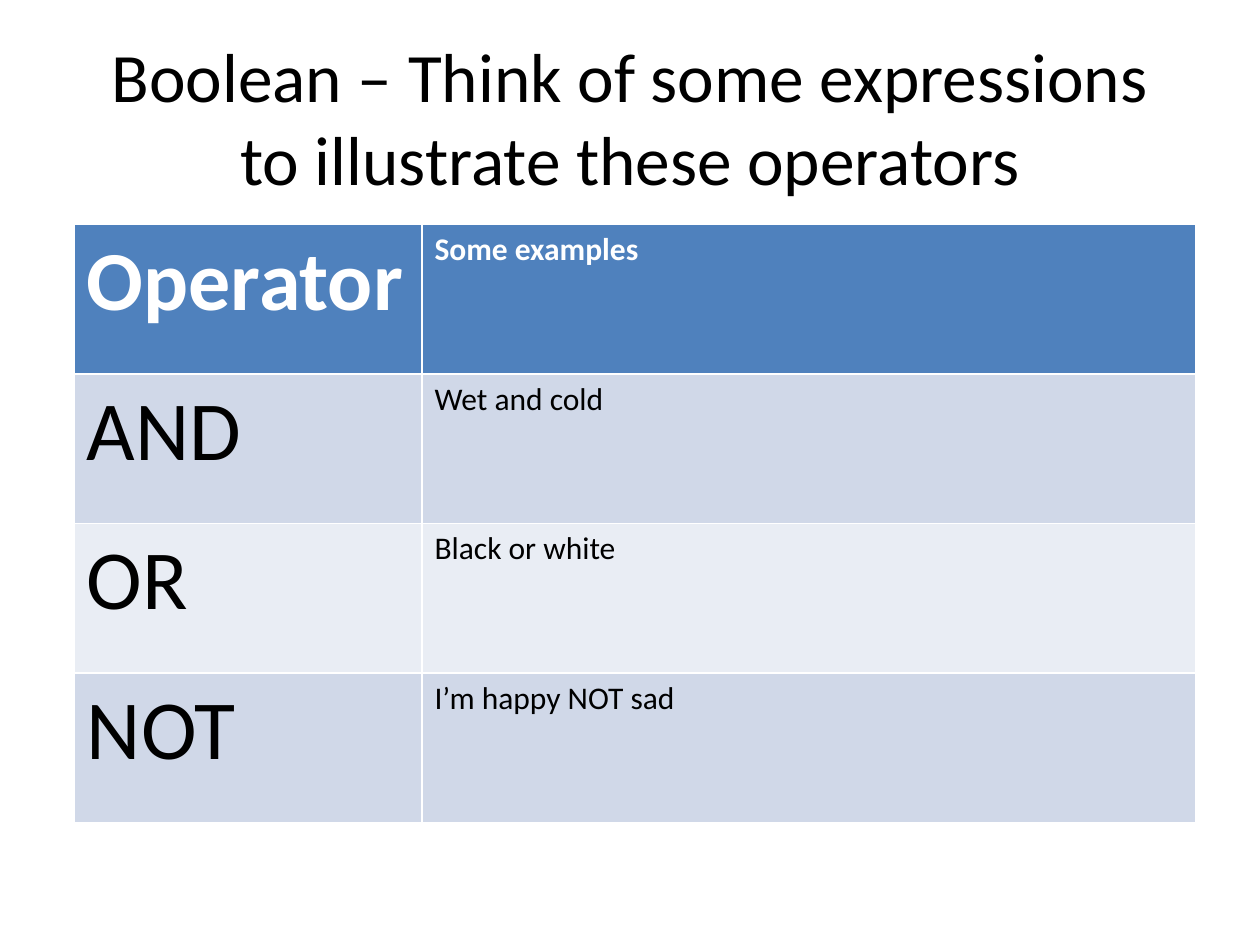
import pptx
import pptx.util
import pptx.dml.color
import pptx.enum.text

Inch, Pt = pptx.util.Inches, pptx.util.Pt
Rgb = pptx.dml.color.RGBColor.from_string
Text = pptx.enum.text

# Theme: colours and type sizes
theme = {
    "font": "Calibri",
    "ink": "000000",
    "head": "4F81BD",
    "pale": "FFFFFF",
    "bands": ("D0D8E8", "E9EDF4"),
    "title": 39.6,
    "sizes": (48, 18),
}


def style(font, size, ink, bold):
    form = {"name": theme["font"], "size": Pt(size), "bold": bold}
    for key, value in form.items():
        setattr(font, key, value)
    font.color.rgb = Rgb(ink)


# Slide
deck = pptx.Presentation()
wide, high = Inch(10), Inch(7.5)
deck.slide_width, deck.slide_height = wide, high
slide = deck.slides.add_slide(deck.slide_layouts[5])

# Title
title = slide.shapes.title
place = {"left": 0.05 * wide, "top": 0.04 * high,
         "width": 0.9 * wide, "height": Inch(1.25)}
for key, value in place.items():
    setattr(title, key, int(value))
frame = title.text_frame
frame.text = "Boolean – Think of some expressions to illustrate these operators"
form = {"word_wrap": True, "auto_size": Text.MSO_AUTO_SIZE.NONE,
        "vertical_anchor": Text.MSO_ANCHOR.MIDDLE}
for key, value in form.items():
    setattr(frame, key, value)
line = frame.paragraphs[0]
line.alignment = Text.PP_ALIGN.CENTER
style(line.runs[0].font, theme["title"], theme["ink"], False)

# Table: equal rows, columns as shares of its width
rows = (
    ("Operator", "Some examples"),
    ("AND", "Wet and cold"),
    ("OR", "Black or white"),
    ("NOT", "I’m happy NOT sad"),
)
shares = (0.31, 0.69)
span, tall = Inch(8.9), Inch(4.75)
grid = slide.shapes.add_table(
    len(rows), len(shares), Inch(0.59), Inch(1.78), span, tall).table
for col, share in zip(grid.columns, shares):
    col.width = int(span * share)

# Cells: header row, then alternating bands
for r, row in enumerate(rows):
    top = r == 0
    fill = theme["head"] if top else theme["bands"][(r - 1) % 2]
    ink = theme["pale"] if top else theme["ink"]
    for c, words in enumerate(row):
        cell = grid.cell(r, c)
        cell.fill.solid()
        cell.fill.fore_color.rgb = Rgb(fill)
        cell.text = words
        run = cell.text_frame.paragraphs[0].runs[0]
        style(run.font, theme["sizes"][c], ink, top)

deck.save("out.pptx")
